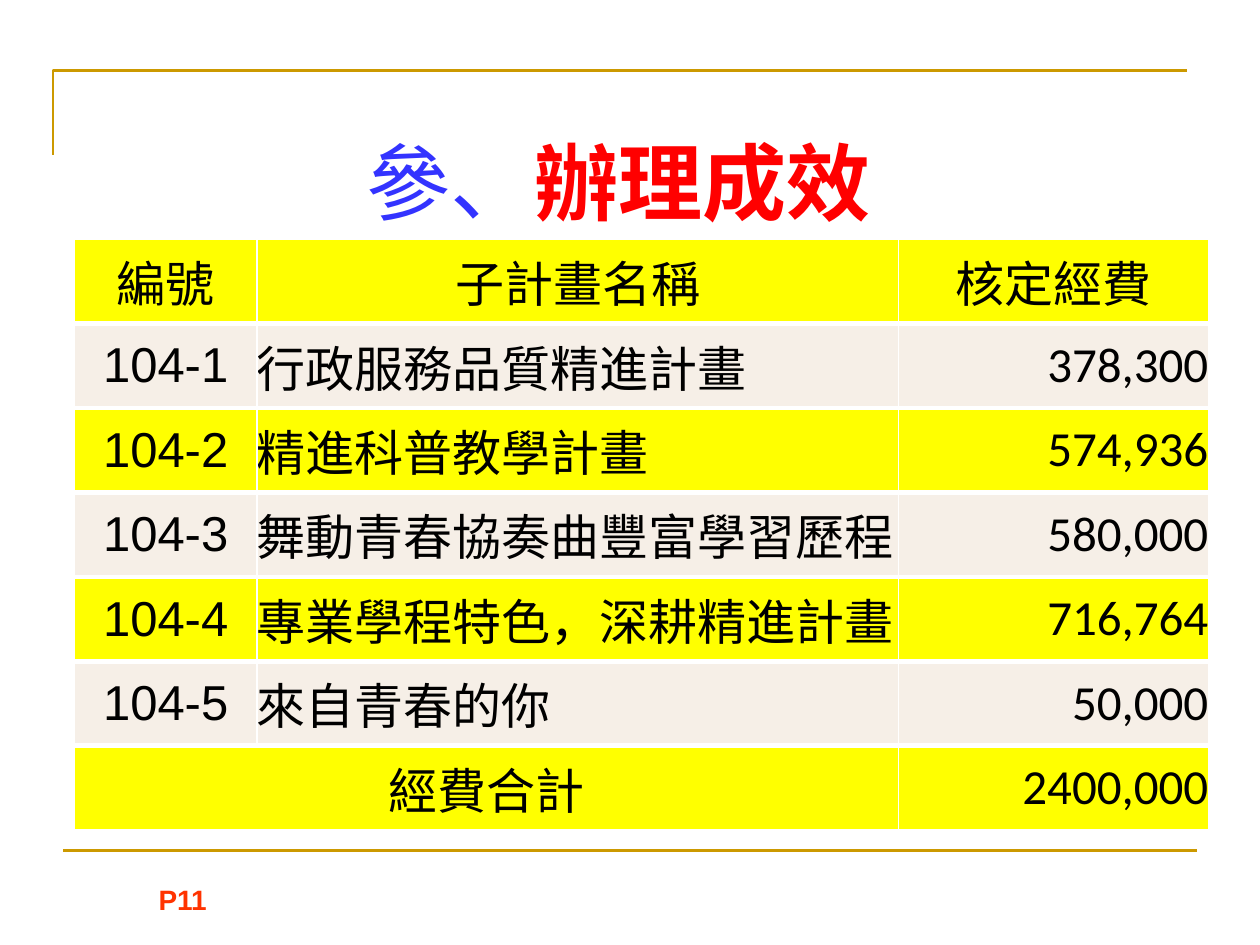
from lxml import etree
from pptx import Presentation
from pptx.dml.color import RGBColor
from pptx.enum.shapes import MSO_CONNECTOR
from pptx.enum.text import MSO_ANCHOR, MSO_AUTO_SIZE, PP_ALIGN
from pptx.oxml.ns import qn
from pptx.util import Inches, Pt

LEFT, CENTER, RIGHT, JUSTIFY = (
    PP_ALIGN.LEFT, PP_ALIGN.CENTER, PP_ALIGN.RIGHT, PP_ALIGN.JUSTIFY)
TOP, MIDDLE, BOTTOM = MSO_ANCHOR.TOP, MSO_ANCHOR.MIDDLE, MSO_ANCHOR.BOTTOM
STRAIGHT = MSO_CONNECTOR.STRAIGHT
FIT_SHAPE = MSO_AUTO_SIZE.SHAPE_TO_FIT_TEXT

WIDTH, HEIGHT = Inches(10), Inches(7.5)
GOLD, YELLOW, CREAM, WHITE = "CC9900", "FFFF00", "F6EFE7", "FFFFFF"
HEADER = ("編號", "子計畫名稱", "核定經費")
PROJECTS = (
    ("104-1", "行政服務品質精進計畫", "378,300"),
    ("104-2", "精進科普教學計畫", "574,936"),
    ("104-3", "舞動青春協奏曲豐富學習歷程", "580,000"),
    ("104-4", "專業學程特色，深耕精進計畫", "716,764"),
    ("104-5", "來自青春的你", "50,000"),
)
TOTAL = ("經費合計", "", "2400,000")


def color(value):
    return RGBColor.from_string(value)


def share(x, y, w, h):
    return (int(WIDTH * x / 100), int(HEIGHT * y / 100),
            int(WIDTH * w / 100), int(HEIGHT * h / 100))


def add_text(p, text, size=28, font="Arial", fill="000000", bold=False,
             align=LEFT):
    p.alignment = align
    r = p.add_run()
    r.text = text
    r.font.size = Pt(size)
    r.font.name = font
    r.font.bold = bold
    r.font.color.rgb = color(fill)


def set_line(sp):
    sp.line.color.rgb = color(GOLD)
    sp.line.width = Pt(1.5)


def add_corner(slide, box):
    x, y, w, h = box
    builder = slide.shapes.build_freeform(x, y + h)
    builder.add_line_segments([(x, y), (x + w, y)], close=False)
    sp = builder.convert_to_shape()
    sp.shadow.inherit = False
    sp.fill.background()
    set_line(sp)


def add_rule(slide, box):
    x, y, w, h = box
    sp = slide.shapes.add_connector(STRAIGHT, x, y, x + w, y + h)
    set_line(sp)
    etree.SubElement(sp._element.spPr, qn("a:effectLst"))


def add_textbox(slide, box, anchor, wrap):
    tf = slide.shapes.add_textbox(*box).text_frame
    tf.vertical_anchor = anchor
    tf.word_wrap = wrap
    return tf


def add_title(slide, box):
    tf = add_textbox(slide, box, TOP, False)
    tf.auto_size = FIT_SHAPE
    p = tf.paragraphs[0]
    add_text(p, "參、", size=48, fill="3333FF", align=CENTER)
    add_text(p, "辦理成效", size=48, fill="FF0000", bold=True, align=CENTER)


def add_page_label(slide, box):
    tf = add_textbox(slide, box, BOTTOM, True)
    add_text(tf.paragraphs[0], "P11", size=16, fill="FF3300", bold=True,
             align=RIGHT)


def set_borders(cell, top, bottom):
    tcPr = cell._tc.get_or_add_tcPr()
    sides = (("lnL", 1), ("lnR", 1), ("lnT", top), ("lnB", bottom))
    for i, (tag, width) in enumerate(sides):
        ln = etree.Element(qn(f"a:{tag}"), w=str(Pt(width)))
        fill = etree.SubElement(ln, qn("a:solidFill"))
        etree.SubElement(fill, qn("a:srgbClr"), val=WHITE)
        tcPr.insert(i, ln)


def add_budget_table(slide, box):
    rows = (HEADER, *PROJECTS, TOTAL)
    last = len(rows) - 1
    table = slide.shapes.add_table(len(rows), len(HEADER), *box).table
    for column, part in zip(table.columns, (16.1, 56.6, 27.3)):
        column.width = int(box[2] * part / 100)
    for row in table.rows:
        row.height = box[3] // len(rows)
    table.cell(last, 0).merge(table.cell(last, 1))

    for i, texts in enumerate(rows):
        for j, text in enumerate(texts):
            cell = table.cell(i, j)
            cell.fill.solid()
            cell.fill.fore_color.rgb = color(CREAM if i % 2 else YELLOW)
            cell.vertical_anchor = MIDDLE
            cell.margin_left = cell.margin_right = Inches(0 if j else 0.07)
            cell.margin_top = cell.margin_bottom = 0
            set_borders(cell, 3 if i else 1, 1 if i == last else 3)
            if text:
                add_text(cell.text_frame.paragraphs[0], text,
                         font="Calibri" if j == 2 else "Arial",
                         align=(CENTER, JUSTIFY, RIGHT)[j] if i else CENTER)


def main():
    prs = Presentation()
    prs.slide_width, prs.slide_height = WIDTH, HEIGHT
    slide = prs.slides.add_slide(prs.slide_layouts[6])
    add_corner(slide, share(4.2, 7.47, 90, 8.93))
    add_rule(slide, share(5, 90, 90, 0))
    add_page_label(slide, share(-5.9, 90.93, 23.3, 6.67))
    add_title(slide, share(27.9, 13.2, 42.4, 12.13))
    add_budget_table(slide, share(5.9, 25.33, 90, 62.53))
    prs.save("out.pptx")


if __name__ == "__main__":
    main()
